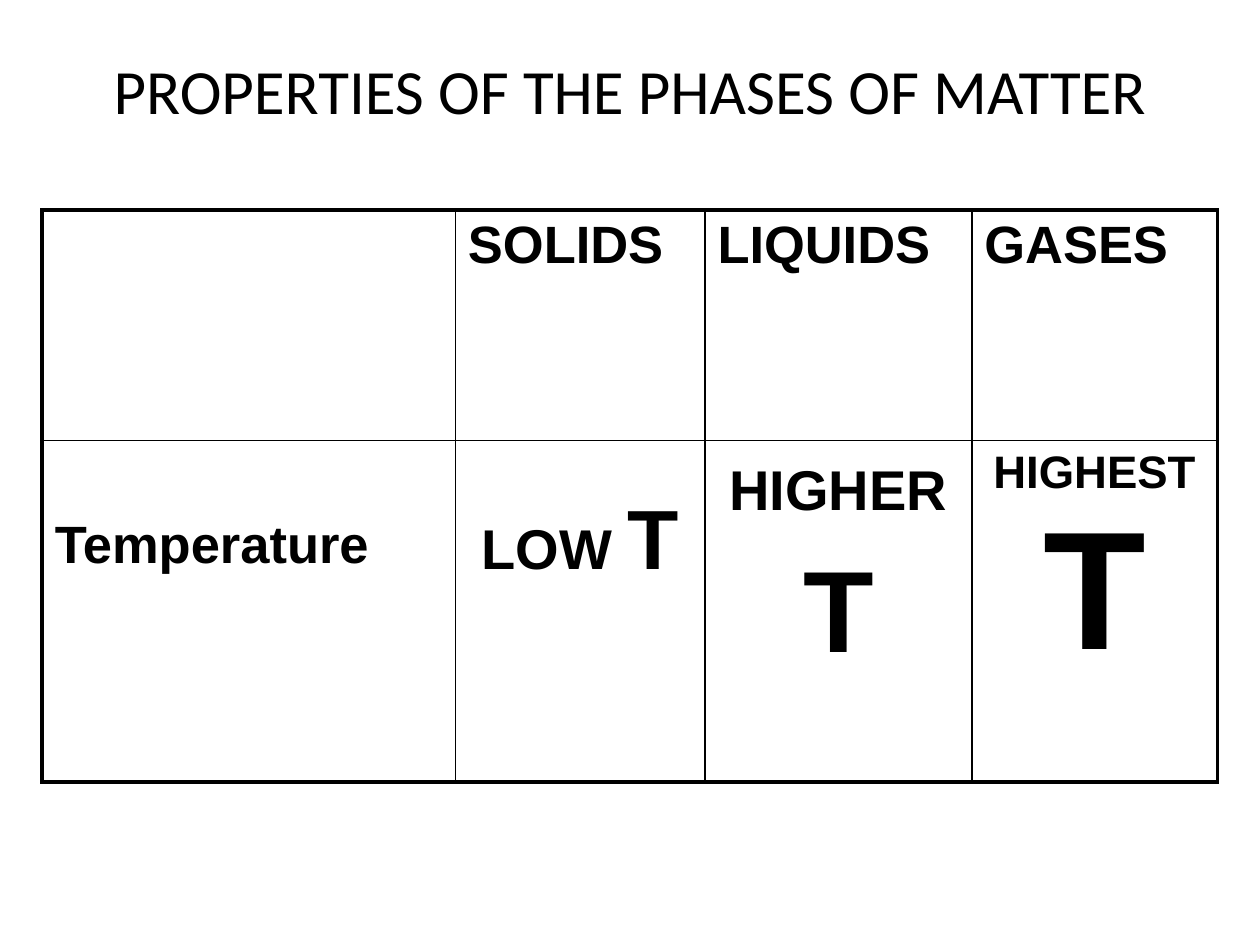
"""Build a slide with a table comparing the temperature of the phases of matter."""
from lxml import etree
from pptx import Presentation
from pptx.dml.color import RGBColor
from pptx.enum.text import MSO_ANCHOR, PP_ALIGN
from pptx.oxml.ns import qn
from pptx.util import Cm, Pt

LEFT, CENTER = PP_ALIGN.LEFT, PP_ALIGN.CENTER
MIDDLE = MSO_ANCHOR.MIDDLE
COLORS = {"ink": "000000"}
TITLE = "PROPERTIES OF THE PHASES OF MATTER"
COLUMN_WIDTHS = [8.33, 5.03, 5.38, 4.95]
ROW_HEIGHTS = [4.65, 6.88]
OUTER_LINE, INNER_LINE = 2.25, 1
TOP_MARGIN, LABEL_TOP_MARGIN = 0.13, 1.52

# Each cell: spans of (text, size), alignment, line spacing, top margin
ROWS = [
    [
        ([], LEFT, 1, TOP_MARGIN),
        ([("SOLIDS", 30)], LEFT, 1, TOP_MARGIN),
        ([("LIQUIDS", 30)], LEFT, 1, TOP_MARGIN),
        ([("GASES", 30)], LEFT, 1, TOP_MARGIN),
    ],
    [
        ([("Temperature", 30)], LEFT, 1, LABEL_TOP_MARGIN),
        ([("LOW ", 32), ("T", 48)], CENTER, 1.5, TOP_MARGIN),
        ([("HIGHER ", 32), ("T", 66)], CENTER, 1.2, TOP_MARGIN),
        ([("HIGHEST ", 26), ("T", 96)], CENTER, 1, TOP_MARGIN),
    ],
]


def write(para, spans, font_name, bold, align, line_spacing=1):
    para.alignment = align
    para.line_spacing = line_spacing
    para.font.name = font_name
    para.font.bold = bold
    para.font.color.rgb = RGBColor.from_string(COLORS["ink"])
    sizes = {size for text, size in spans}
    if len(sizes) == 1:
        para.font.size = Pt(sizes.pop())
    for text, size in spans:
        span = para.add_run()
        span.text = text
        if para.font.size is None:
            span.font.size = Pt(size)


def set_borders(cell, row, column):
    outer_sides = {
        "a:lnL": column == 0,
        "a:lnR": column == len(COLUMN_WIDTHS) - 1,
        "a:lnT": row == 0,
        "a:lnB": row == len(ROW_HEIGHTS) - 1,
    }
    properties = cell._tc.get_or_add_tcPr()
    for side, is_outer in outer_sides.items():
        width = Pt(OUTER_LINE if is_outer else INNER_LINE)
        line = etree.SubElement(properties, qn(side), w=str(int(width)))
        fill = etree.SubElement(line, qn("a:solidFill"))
        etree.SubElement(fill, qn("a:srgbClr"), val=COLORS["ink"])


def add_title(page):
    box = page.shapes.add_textbox(Cm(1.9), Cm(0.64), Cm(21.6), Cm(2.33))
    box.text_frame.word_wrap = True
    box.text_frame.vertical_anchor = MIDDLE
    write(box.text_frame.paragraphs[0], [(TITLE, 36)], "Calibri", False, CENTER)


def add_phase_table(page):
    table = page.shapes.add_table(
        len(ROW_HEIGHTS), len(COLUMN_WIDTHS), Cm(0.85), Cm(4.23),
        Cm(sum(COLUMN_WIDTHS)), Cm(sum(ROW_HEIGHTS))).table
    table.first_row = table.horz_banding = False
    for column, width in zip(table.columns, COLUMN_WIDTHS):
        column.width = Cm(width)
    for row, height in zip(table.rows, ROW_HEIGHTS):
        row.height = Cm(height)
    for r, cells in enumerate(ROWS):
        for c, (spans, align, line_spacing, top_margin) in enumerate(cells):
            cell = table.cell(r, c)
            cell.margin_top = Cm(top_margin)
            set_borders(cell, r, c)
            cell.fill.background()
            para = cell.text_frame.paragraphs[0]
            write(para, spans, "Arial", True, align, line_spacing)


def main():
    deck = Presentation()
    deck.slide_width, deck.slide_height = Cm(25.4), Cm(19.05)
    page = deck.slides.add_slide(deck.slide_layouts[6])
    add_title(page)
    add_phase_table(page)
    deck.save("out.pptx")


if __name__ == "__main__":
    main()
